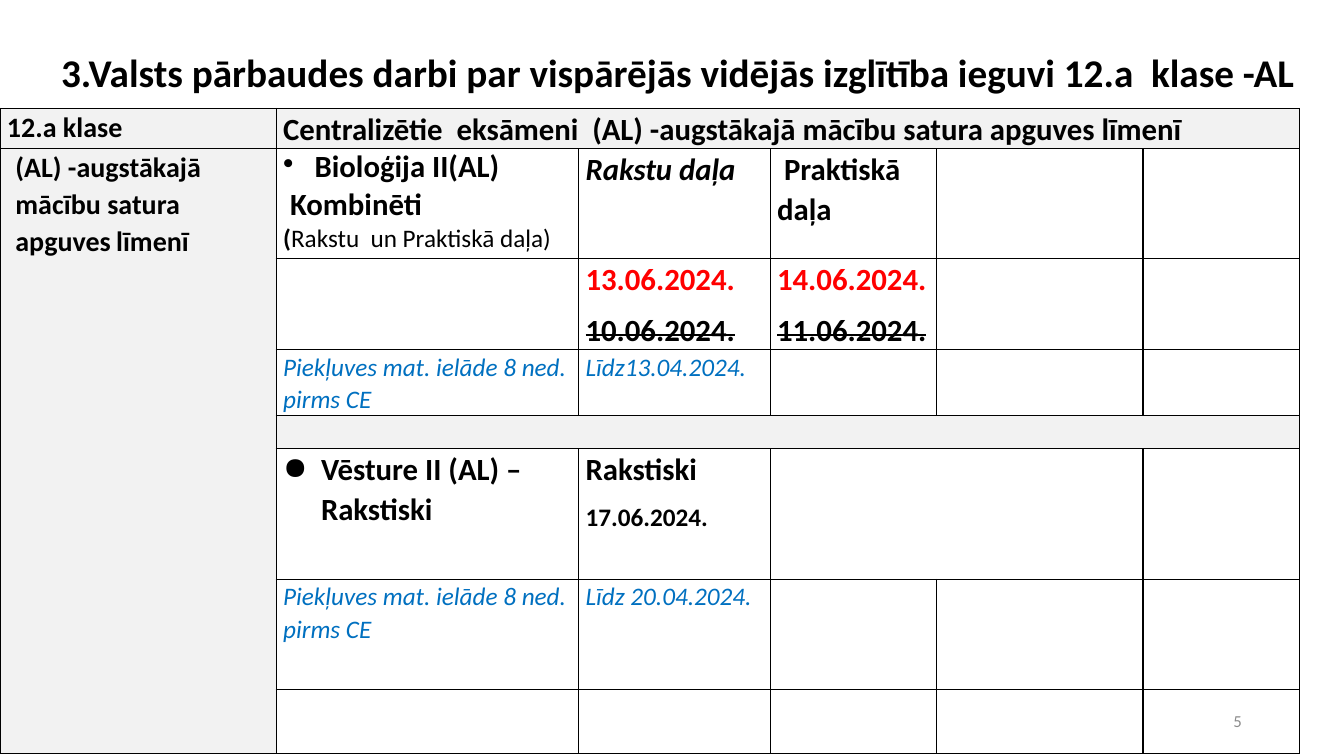
from dataclasses import dataclass

from lxml.etree import SubElement
from pptx import Presentation
from pptx.dml.color import RGBColor
from pptx.enum.text import MSO_ANCHOR, PP_ALIGN
from pptx.oxml.ns import qn
from pptx.util import Pt


@dataclass(frozen=True)
class Theme:
    font: str = "Calibri"
    black: str = "000000"
    red: str = "FF0000"
    blue: str = "0070C0"
    grey: str = "8C8C8C"
    shade: str = "F2F2F2"
    white: str = "FFFFFF"
    title: int = 28
    large: int = 22
    medium: int = 20
    small: int = 18
    number: int = 12


T = Theme()

# Run formats
HEAD = {"size": T.large, "bold": True}
SIDE = {"size": T.medium, "bold": True}
NOTE = {"size": T.small, "italic": True, "color": T.blue}
NEW_DATE = {**HEAD, "color": T.red}
OLD_DATE = {**HEAD, "strike": True}
SMALL = {"size": T.small}
SMALL_BOLD = {"size": T.small, "bold": True}

# Paragraph formats
SPACED = {"line_spacing": 1.07, "space_after": Pt(8)}
TIGHT = {"line_spacing": 1.0, "space_after": Pt(0)}

COLUMNS = [197.3, 216, 136.8, 118.8, 147.6, 111.6]
ROWS = [28.5, 78.5, 65, 47, 23.5, 93.5, 78.5, 46]
MERGES = [((0, 1), (0, 5)), ((1, 0), (7, 0)), ((4, 1), (4, 5)), ((5, 3), (5, 4))]
SHADED = [(0, 0), (0, 1), (1, 0), (4, 1)]


def para(*runs, layout=SPACED, **extras):
    """Describe one paragraph: its runs, spacing, and bullet, indent or tab."""
    return {"runs": runs, "layout": layout, **extras}


ACCESS = [para(("Piekļuves mat. ielāde 8 ned. pirms CE", NOTE))]
CELLS = {
    (0, 0): [para(("12.a klase", SIDE))],
    (0, 1): [para(("Centralizētie  eksāmeni  (AL) -augstākajā mācību satura apguves līmenī", HEAD))],
    (1, 0): [para(("(AL) -augstākajā mācību satura apguves\tlīmenī", SIDE), left=6, tab=126)],
    (1, 1): [
        para(("Bioloģija II(AL)", HEAD), layout=TIGHT, left=22.5, hanging=22.5, bullet="•"),
        para((" Kombinēti", HEAD), layout=TIGHT),
        para(("(", SMALL_BOLD), ("Rakstu  un Praktiskā daļa)", SMALL), layout=TIGHT),
    ],
    (1, 2): [para(("Rakstu daļa", {**HEAD, "italic": True}))],
    (1, 3): [para((" Praktiskā daļa", HEAD))],
    (2, 2): [para(("13.06.2024.", NEW_DATE)), para(("10.06.2024.", OLD_DATE))],
    (2, 3): [para(("14.06.2024.", NEW_DATE)), para(("11.06.2024.", OLD_DATE))],
    (3, 1): ACCESS,
    (3, 2): [para(("Līdz13.04.2024.", NOTE))],
    (5, 1): [para(("Vēsture II (AL) –Rakstiski", HEAD), left=27, hanging=27, bullet="●")],
    (5, 2): [para(("Rakstiski", HEAD)), para(("17.06.2024.", SMALL_BOLD))],
    (6, 1): ACCESS,
    (6, 2): [para(("Līdz 20.04.2024.", NOTE))],
}


def add_run(p, text, size, bold=False, italic=False, color=T.black, strike=False):
    r = p.add_run()
    r.text = text
    for name, value in {"name": T.font, "size": Pt(size), "bold": bold, "italic": italic}.items():
        setattr(r.font, name, value)
    r.font.color.rgb = RGBColor.from_string(color)
    if strike:
        r.font._element.set("strike", "sngStrike")


def write_paragraph(p, runs, layout, left=0, hanging=0, bullet=None, tab=None):
    for name, value in layout.items():
        setattr(p, name, value)
    pPr = p._p.get_or_add_pPr()
    pPr.set("marL", str(Pt(left)))
    pPr.set("indent", str(-Pt(hanging)))
    if bullet:
        SubElement(pPr, qn("a:buChar"), char=bullet)
    if tab:
        tabs = SubElement(pPr, qn("a:tabLst"))
        SubElement(tabs, qn("a:tab"), pos=str(Pt(tab)), algn="l")
    for text, style in runs:
        add_run(p, text, **style)


def add_borders(cell):
    tcPr = cell._tc.get_or_add_tcPr()
    for index, side in enumerate(("a:lnL", "a:lnR", "a:lnT", "a:lnB")):
        line = tcPr.makeelement(qn(side), {"w": str(Pt(1))})
        fill = SubElement(line, qn("a:solidFill"))
        SubElement(fill, qn("a:srgbClr"), val=T.black)
        tcPr.insert(index, line)


def format_cell(cell, shaded):
    for side, value in {"left": 5, "right": 5, "top": 0, "bottom": 0}.items():
        setattr(cell, f"margin_{side}", Pt(value))
    cell.fill.solid()
    cell.fill.fore_color.rgb = RGBColor.from_string(T.shade if shaded else T.white)
    add_borders(cell)


def add_exam_table(s):
    table = s.shapes.add_table(len(ROWS), len(COLUMNS), Pt(0), Pt(77.5),
                               Pt(sum(COLUMNS)), Pt(sum(ROWS))).table
    table.first_row = table.horz_banding = False
    for column, width in zip(table.columns, COLUMNS):
        column.width = Pt(width)
    for row, height in zip(table.rows, ROWS):
        row.height = Pt(height)
    for first, last in MERGES:
        table.cell(*first).merge(table.cell(*last))
    for i in range(len(ROWS)):
        for j in range(len(COLUMNS)):
            format_cell(table.cell(i, j), (i, j) in SHADED)
    for place, paragraphs in CELLS.items():
        tf = table.cell(*place).text_frame
        for k, content in enumerate(paragraphs):
            write_paragraph(tf.add_paragraph() if k else tf.paragraphs[0], **content)


def set_line(sp, box, text, align, **style):
    """Place a shape and give it one line of text."""
    for name, value in zip(("left", "top", "width", "height"), box):
        setattr(sp, name, Pt(value))
    tf = sp.text_frame
    tf.word_wrap = True
    tf.vertical_anchor = MSO_ANCHOR.MIDDLE
    p = tf.paragraphs[0]
    p.alignment = align
    add_run(p, text, **style)


def main():
    prs = Presentation()
    prs.slide_width, prs.slide_height = Pt(960), Pt(540)
    s = prs.slides.add_slide(prs.slide_layouts[5])

    # Title
    set_line(s.shapes.title, (20.2, 10.8, 927.4, 81.4),
             "3.Valsts pārbaudes darbi par vispārējās vidējās izglītība ieguvi 12.a  klase -AL",
             PP_ALIGN.CENTER, size=T.title, bold=True)

    # Exam schedule
    add_exam_table(s)

    # Slide number
    number = s.shapes.add_textbox(0, 0, 0, 0)
    set_line(number, (678.2, 500.4, 216, 28.8), "5", PP_ALIGN.RIGHT, size=T.number, color=T.grey)

    prs.save("out.pptx")


if __name__ == "__main__":
    main()
